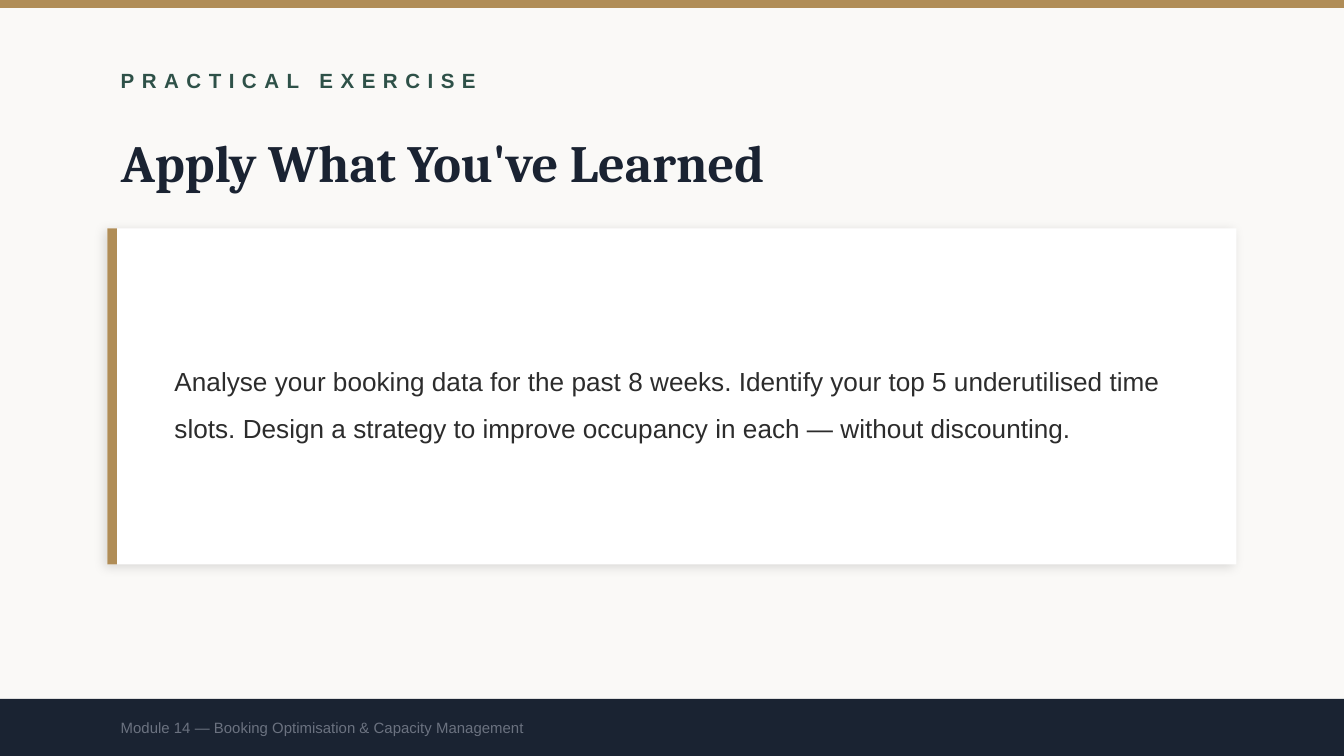
import dataclasses
import lxml.etree
import pptx
import pptx.dml.color
import pptx.enum.shapes
import pptx.enum.text
import pptx.oxml.ns
import pptx.util

Inches = pptx.util.Inches


@dataclasses.dataclass(frozen=True)
class Theme:
    paper: str = "FAF9F7"
    gold: str = "B08D57"
    green: str = "2E5148"
    navy: str = "1A2332"
    white: str = "FFFFFF"
    ink: str = "2C2C2C"
    gray: str = "6B7280"
    shade: str = "000000"
    sans: str = "Arial"
    serif: str = "Cambria"
    label: float = 11
    title: float = 28
    body: float = 14
    foot: float = 8


THEME = Theme()
WIDE = 10
HIGH = WIDE * 9 / 16
EDGE = 0.8


def tint(code):
    return pptx.dml.color.RGBColor.from_string(code)


def place(shape, box):
    shape.left, shape.top, shape.width, shape.height = map(Inches, box)


def add_rect(slide, box, color):
    kind = pptx.enum.shapes.MSO_SHAPE.RECTANGLE
    rect = slide.shapes.add_shape(kind, *map(Inches, box))
    rect.shadow.inherit = False
    rect.fill.solid()
    rect.fill.fore_color.rgb = tint(color)
    rect.line.fill.background()
    return rect


def add_shade(shape, color, alpha, blur, dist, angle):
    qn = pptx.oxml.ns.qn
    sub = lxml.etree.SubElement
    glow = sub(
        shape._element.spPr.find(qn("a:effectLst")),
        qn("a:outerShdw"),
        blurRad=str(pptx.util.Pt(blur)),
        dist=str(pptx.util.Pt(dist)),
        dir=str(angle * 60000),
        algn="bl",
        rotWithShape="0",
    )
    fill = sub(glow, qn("a:srgbClr"), val=color)
    sub(fill, qn("a:alpha"), val=str(alpha * 1000))


def set_text(shape, text, size, color, face=THEME.sans, bold=False):
    frame = shape.text_frame
    frame.text = text
    frame.word_wrap = True
    frame.auto_size = pptx.enum.text.MSO_AUTO_SIZE.NONE
    frame.vertical_anchor = pptx.enum.text.MSO_ANCHOR.MIDDLE
    para = frame.paragraphs[0]
    para.alignment = pptx.enum.text.PP_ALIGN.LEFT
    font = para.runs[0].font
    font.name, font.size, font.bold = face, pptx.util.Pt(size), bold
    font.color.rgb = tint(color)
    return para


def add_text(slide, box, *style, **more):
    shape = slide.shapes.add_textbox(*map(Inches, box))
    return set_text(shape, *style, **more)


def add_head(slide, box, label, title):
    left, top, width, high = box
    para = add_text(slide, (left, top, width, 0.4), label,
                    THEME.label, THEME.green, bold=True)
    para.runs[0]._r.get_or_add_rPr().set("spc", "400")
    name = slide.shapes.title
    place(name, (left, top + 0.5, width, high - 0.5))
    set_text(name, title, THEME.title, THEME.navy, THEME.serif, True)


def add_card(slide, box, text):
    left, top, width, high = box
    card = add_rect(slide, box, THEME.white)
    add_shade(card, THEME.shade, alpha=12, blur=6, dist=2, angle=135)
    add_rect(slide, (left, top, 0.07, high), THEME.gold)
    para = add_text(slide, (left + 0.4, top + 0.2, width - 0.7, high - 0.4),
                    text, THEME.body, THEME.ink)
    para.line_spacing = 1.5


def add_foot(slide, box, text):
    left, top, width, high = box
    add_rect(slide, box, THEME.navy)
    add_text(slide, (left + EDGE, top, width - 2, high),
             text, THEME.foot, THEME.gray)


def main():
    deck = pptx.Presentation()
    deck.slide_width, deck.slide_height = Inches(WIDE), Inches(HIGH)
    slide = deck.slides.add_slide(deck.slide_layouts[5])
    back = slide.background.fill
    back.solid()
    back.fore_color.rgb = tint(THEME.paper)

    add_rect(slide, (0, 0, WIDE, 0.06), THEME.gold)
    add_head(slide, (EDGE, 0.4, 8, 1.1),
             "PRACTICAL EXERCISE", "Apply What You've Learned")
    add_card(slide, (EDGE, 1.7, WIDE - 2 * EDGE, 2.5),
             "Analyse your booking data for the past 8 weeks. "
             "Identify your top 5 underutilised time slots. "
             "Design a strategy to improve occupancy in each "
             "— without discounting.")
    add_foot(slide, (0, 5.2, WIDE, HIGH - 5.2),
             "Module 14 — Booking Optimisation & Capacity Management")
    deck.save("out.pptx")


if __name__ == "__main__":
    main()
